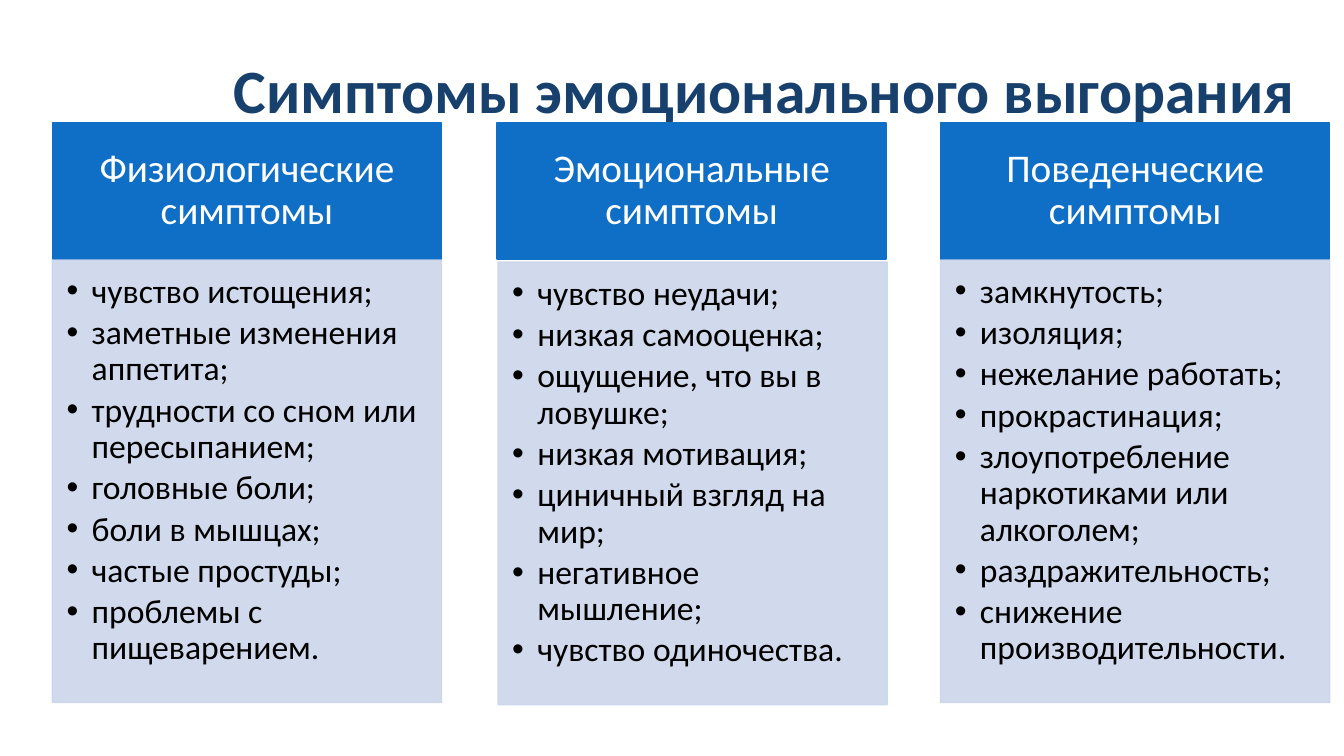
from lxml import etree
from pptx import Presentation
from pptx.dml.color import RGBColor
from pptx.enum import shapes, text
from pptx.oxml import ns
from pptx.util import Inches, Pt

COLORS = {"title": "17406D", "header": "0F6FC6", "body": "CCD5EA", "white": "FFFFFF", "black": "000000"}
WIDTH, HEADER_TOP, HEADER_HEIGHT, BODY_HEIGHT = 3.86, 1.22, 1.35, 4.39

columns = [
    (0.52, 0.52, 2.58, "Физиологические симптомы", [
        "чувство истощения;", "заметные изменения аппетита;",
        "трудности со сном или пересыпанием;", "головные боли;",
        "боли в мышцах;", "частые простуды;", "проблемы с пищеварением."]),
    (4.93, 4.94, 2.6, "Эмоциональные симптомы", [
        "чувство неудачи;", "низкая самооценка;", "ощущение, что вы в ловушке;",
        "низкая мотивация;", "циничный взгляд на мир;",
        "негативное мышление;", "чувство одиночества."]),
    (9.33, 9.33, 2.58, "Поведенческие симптомы", [
        "замкнутость;", "изоляция;", "нежелание работать;", "прокрастинация;",
        "злоупотребление наркотиками или алкоголем;", "раздражительность;",
        "снижение производительности."]),
]


def add_panel(left, top, height, color, margins, anchor):
    shape = slide.shapes.add_shape(
        shapes.MSO_SHAPE.RECTANGLE, Inches(left), Inches(top), Inches(WIDTH), Inches(height))
    shape.shadow.inherit = False
    shape.fill.solid()
    shape.line.width = Pt(1)
    for fill in (shape.fill, shape.line.fill):
        fill.solid()
        fill.fore_color.rgb = RGBColor.from_string(COLORS[color])
    frame = shape.text_frame
    frame.word_wrap = True
    frame.vertical_anchor = anchor
    for side, margin in zip(("left", "top", "right", "bottom"), margins):
        setattr(frame, f"margin_{side}", Inches(margin))
    return shape


def write(paragraph, words, size, color, alignment, bold=False):
    paragraph.alignment = alignment
    paragraph.line_spacing = 0.9
    run = paragraph.add_run()
    run.text = words
    formats = {"name": "Calibri", "size": Pt(size), "bold": bold}
    for name, value in formats.items():
        setattr(run.font, name, value)
    run.font.color.rgb = RGBColor.from_string(COLORS[color])


presentation = Presentation()
presentation.slide_width = Inches(13.33)
presentation.slide_height = Inches(7.5)
slide = presentation.slides.add_slide(presentation.slide_layouts[5])

title = slide.shapes.title
title_box = {"left": 2.22, "top": 0.2, "width": 10.75, "height": 1.45}
for name, value in title_box.items():
    setattr(title, name, Inches(value))
title.text_frame.auto_size = text.MSO_AUTO_SIZE.NONE
title.text_frame.vertical_anchor = text.MSO_ANCHOR.MIDDLE
write(title.text_frame.paragraphs[0], "Симптомы эмоционального выгорания", 44, "title",
      text.PP_ALIGN.LEFT, True)

for header_left, body_left, body_top, heading, symptoms in columns:
    header = add_panel(header_left, HEADER_TOP, HEADER_HEIGHT, "header",
                       (0.22, 0.12, 0.22, 0.12), text.MSO_ANCHOR.MIDDLE)
    write(header.text_frame.paragraphs[0], heading, 28, "white", text.PP_ALIGN.CENTER)

    body = add_panel(body_left, body_top, BODY_HEIGHT, "body",
                     (0.14, 0.14, 0.19, 0.21), text.MSO_ANCHOR.TOP)
    for color in body._element.spPr.iter(ns.qn("a:srgbClr")):
        etree.SubElement(color, ns.qn("a:alpha"), val="90000")
    for index, symptom in enumerate(symptoms):
        frame = body.text_frame
        paragraph = frame.add_paragraph() if index else frame.paragraphs[0]
        properties = paragraph._p.get_or_add_pPr()
        properties.set("marL", str(Inches(0.25)))
        properties.set("indent", str(-Inches(0.25)))
        etree.SubElement(properties, ns.qn("a:buFont"), typeface="Arial")
        etree.SubElement(properties, ns.qn("a:buChar"), char="•")
        paragraph.level = 1
        paragraph.space_after = Pt(3.6)
        write(paragraph, symptom, 24, "black", text.PP_ALIGN.LEFT)

presentation.save("out.pptx")
